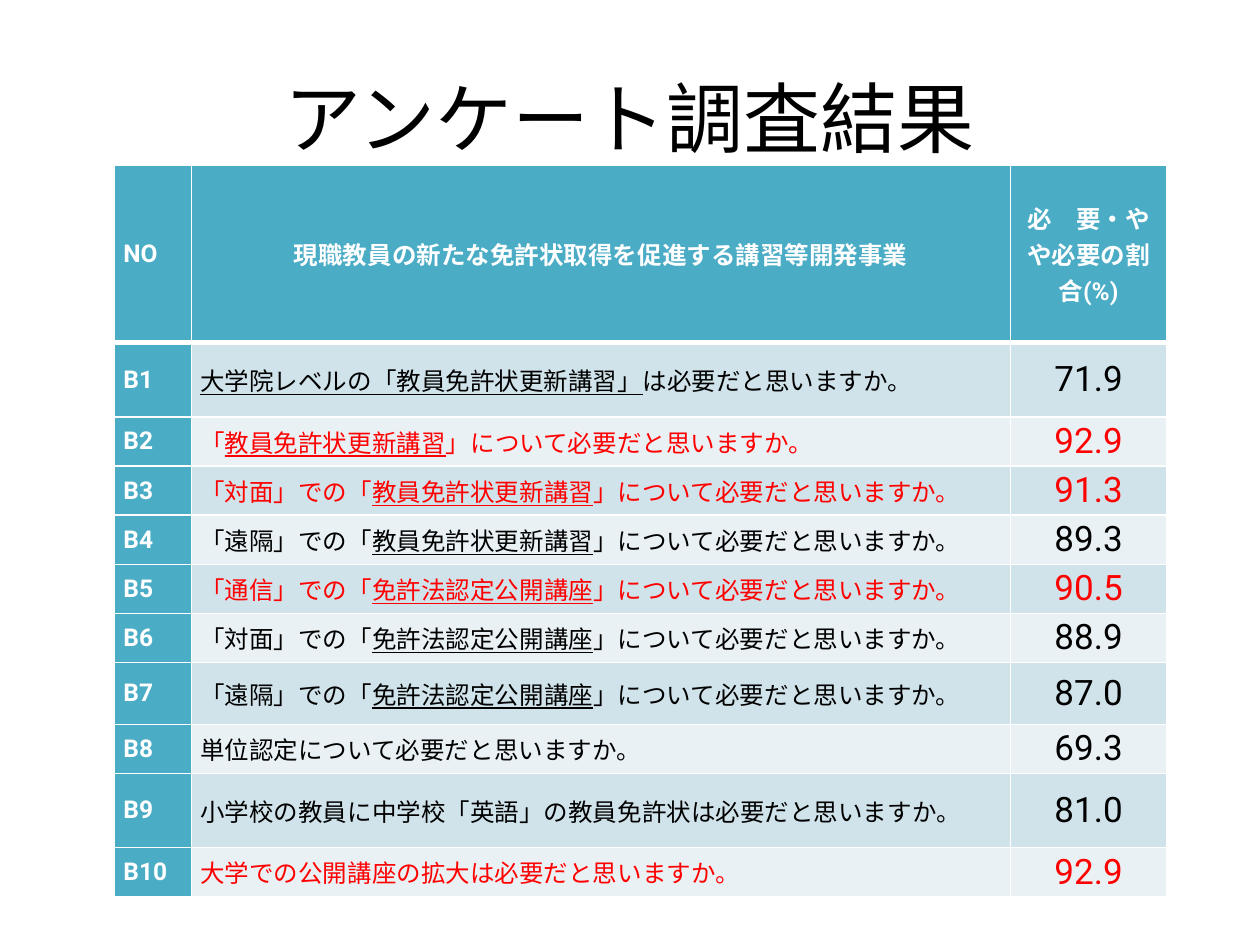
from dataclasses import dataclass

from lxml.etree import SubElement
from pptx import Presentation
from pptx.dml.color import RGBColor
from pptx.enum.text import MSO_ANCHOR as Anchor, PP_ALIGN as Align
from pptx.oxml.ns import qn
from pptx.util import Inches, Pt


@dataclass(frozen=True)
class Theme:
    font: str = "Roboto"
    black: str = "000000"
    white: str = "FFFFFF"
    red: str = "FF0000"
    teal: str = "4BACC6"
    bands: tuple[str, str] = ("D0E3EA", "E9F1F5")
    title_size: int = 44
    body_size: int = 14
    score_size: int = 20
    thin_line: int = 1
    thick_line: int = 3


@dataclass(frozen=True)
class Segment:
    text: str
    underline: bool = False


@dataclass(frozen=True)
class Style:
    size: int
    color: str
    bold: bool = False
    align: Align = Align.LEFT


@dataclass(frozen=True)
class Question:
    segments: tuple[Segment, ...]
    score: str
    height: float = 0.39
    highlight: bool = False


THEME = Theme()
RENEWAL = "教員免許状更新講習"
OPEN_COURSE = "免許法認定公開講座"
HEADINGS = ("NO", "現職教員の新たな免許状取得を促進する講習等開発事業", "必　要・やや必要の割合(%)")
COLUMN_WIDTHS = (0.61, 6.5, 1.24)
HEADER_HEIGHT = 1.41


def about(course: str, mode: str = "") -> tuple[Segment, ...]:
    """Word a question about a course, optionally in one delivery mode."""
    opening = f"「{mode}」での「" if mode else "「"
    return Segment(opening), Segment(course, True), Segment("」について必要だと思いますか。")


QUESTIONS = (
    Question((Segment(f"大学院レベルの「{RENEWAL}」", True), Segment("は必要だと思いますか。")), "71.9", 0.59),
    Question(about(RENEWAL), "92.9", highlight=True),
    Question(about(RENEWAL, "対面"), "91.3", highlight=True),
    Question(about(RENEWAL, "遠隔"), "89.3"),
    Question(about(OPEN_COURSE, "通信"), "90.5", highlight=True),
    Question(about(OPEN_COURSE, "対面"), "88.9"),
    Question(about(OPEN_COURSE, "遠隔"), "87.0", 0.49),
    Question((Segment("単位認定について必要だと思いますか。"),), "69.3"),
    Question((Segment("小学校の教員に中学校「英語」の教員免許状は必要だと思いますか。"),), "81.0", 0.59),
    Question((Segment("大学での公開講座の拡大は必要だと思いますか。"),), "92.9", highlight=True),
)


def write(frame, segments: tuple[Segment, ...], style: Style) -> None:
    """Write one styled paragraph, run by run."""
    para = frame.paragraphs[0]
    para.alignment = style.align
    for segment in segments:
        span = para.add_run()
        span.text = segment.text
        font = span.font
        font.name, font.size, font.bold = THEME.font, Pt(style.size), style.bold
        font.underline = segment.underline
        font.color.rgb = RGBColor.from_string(style.color)


def add_borders(cell, top: int, bottom: int) -> None:
    """Draw white lines on the four sides of a cell."""
    properties = cell._tc.get_or_add_tcPr()
    widths = {"a:lnL": THEME.thin_line, "a:lnR": THEME.thin_line, "a:lnT": top, "a:lnB": bottom}
    for side, width in widths.items():
        line = SubElement(properties, qn(side), w=str(Pt(width)))
        SubElement(SubElement(line, qn("a:solidFill")), qn("a:srgbClr"), val=THEME.white)


def fill_cell(cell, segments: tuple[Segment, ...], style: Style, fill: str,
              top: int = THEME.thin_line, bottom: int = THEME.thin_line) -> None:
    """Give a cell its borders, fill, margins and text."""
    add_borders(cell, top, bottom)
    cell.fill.solid()
    cell.fill.fore_color.rgb = RGBColor.from_string(fill)
    cell.margin_left = cell.margin_right = Inches(0.07)
    cell.margin_top = cell.margin_bottom = 0
    cell.vertical_anchor = Anchor.MIDDLE
    write(cell.text_frame, segments, style)


def add_title(page, text: str) -> None:
    """Add the centred slide title."""
    box = page.shapes.add_textbox(Inches(0.5), Inches(0.3), Inches(9), Inches(1.25))
    frame = box.text_frame
    frame.word_wrap = True
    frame.vertical_anchor = Anchor.MIDDLE
    write(frame, (Segment(text),), Style(THEME.title_size, THEME.black, align=Align.CENTER))


def add_survey_table(page) -> None:
    """Add the table of questions and their scores."""
    heights = (HEADER_HEIGHT, *(question.height for question in QUESTIONS))
    table = page.shapes.add_table(
        len(heights), len(COLUMN_WIDTHS), Inches(0.91), Inches(1.31),
        Inches(sum(COLUMN_WIDTHS)), Inches(sum(heights))).table
    for column, width in zip(table.columns, COLUMN_WIDTHS):
        column.width = Inches(width)
    for row, height in zip(table.rows, heights):
        row.height = Inches(height)

    label = Style(THEME.body_size, THEME.white, bold=True)
    heading = Style(THEME.body_size, THEME.white, bold=True, align=Align.CENTER)
    for index, text in enumerate(HEADINGS):
        fill_cell(table.cell(0, index), (Segment(text),), heading if index else label,
                  THEME.teal, bottom=THEME.thick_line)

    for number, question in enumerate(QUESTIONS, start=1):
        color = THEME.red if question.highlight else THEME.black
        band = THEME.bands[(number - 1) % 2]
        top = THEME.thick_line if number == 1 else THEME.thin_line
        contents = (
            ((Segment(f"B{number}"),), label, THEME.teal),
            (question.segments, Style(THEME.body_size, color), band),
            ((Segment(question.score),), Style(THEME.score_size, color, align=Align.CENTER), band),
        )
        for index, (segments, style, fill) in enumerate(contents):
            fill_cell(table.cell(number, index), segments, style, fill, top=top)


def main() -> None:
    """Build and save the survey results slide."""
    deck = Presentation()
    deck.slide_width, deck.slide_height = Inches(10), Inches(7.5)
    page = deck.slides.add_slide(deck.slide_layouts[6])
    add_title(page, "アンケート調査結果")
    add_survey_table(page)
    deck.save("out.pptx")


if __name__ == "__main__":
    main()
